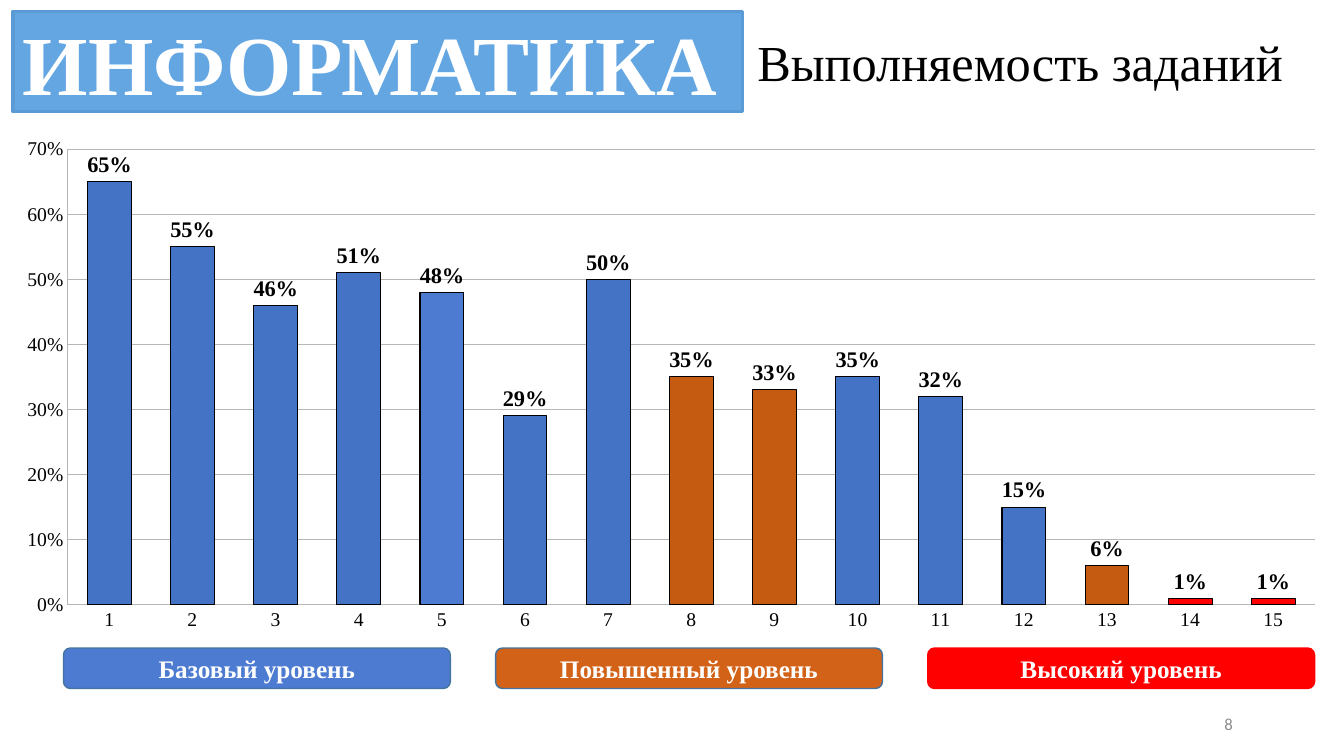
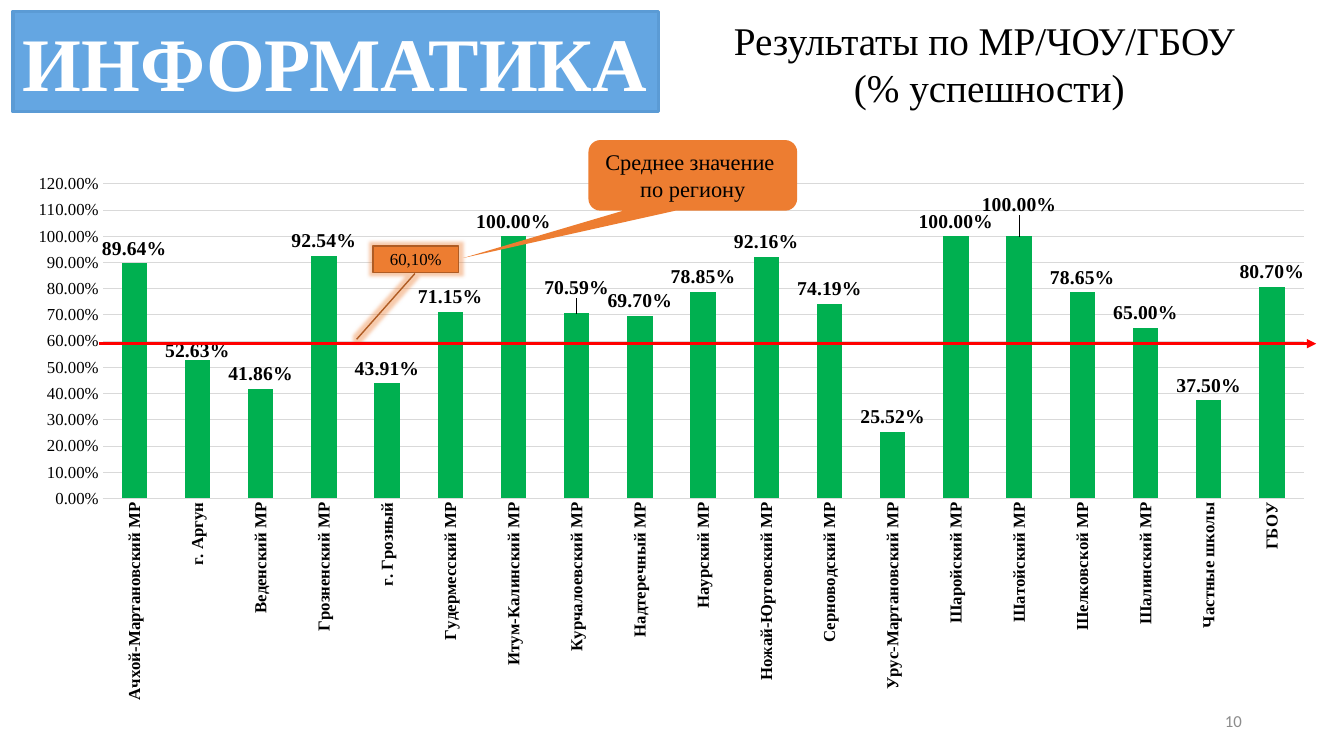
import dataclasses

import lxml.etree
import pptx
import pptx.chart.data
import pptx.dml.color
import pptx.enum.chart
import pptx.enum.shapes
import pptx.enum.text
import pptx.oxml
import pptx.oxml.ns
import pptx.util

Cm = pptx.util.Cm
Pt = pptx.util.Pt
ALIGN = pptx.enum.text.PP_ALIGN
ANCHOR = pptx.enum.text.MSO_ANCHOR
SHAPE = pptx.enum.shapes.MSO_SHAPE
qn = pptx.oxml.ns.qn


@dataclasses.dataclass(frozen=True)
class Theme:
    font: str = "Times New Roman"
    number_font: str = "Calibri"
    black: str = "000000"
    white: str = "FFFFFF"
    gray: str = "8C8C8C"
    banner: str = "64A6E2"
    banner_line: str = "5B9BD5"
    bar: str = "4472C4"
    basic: str = "4C7BD1"
    advanced: str = "D26217"
    advanced_bar: str = "C55A11"
    high: str = "FF0000"
    level_line: str = "43739E"
    success: str = "00B050"
    callout: str = "ED7D31"
    callout_line: str = "AF5C24"
    dark_grid: str = "B7B7B7"
    light_grid: str = "D9D9D9"
    level_size: int = 18
    callout_size: int = 16
    small_size: int = 12


@dataclasses.dataclass(frozen=True)
class ChartStyle:
    number_format: str
    color: str
    gap: int
    maximum: float
    grid: str
    axis_size: int
    label_size: int
    plot: tuple
    bar_line: str = None
    value_line: str = None
    point_colors: dict = dataclasses.field(default_factory=dict)
    label_shifts: dict = dataclasses.field(default_factory=dict)
    vertical_names: bool = False


def rgb(color):
    return pptx.dml.color.RGBColor.from_string(color)


def manual_layout(**values):
    layout = lxml.etree.Element(qn("c:layout"))
    manual = lxml.etree.SubElement(layout, qn("c:manualLayout"))
    for name, value in values.items():
        lxml.etree.SubElement(manual, qn("c:" + name)).set("val", str(value))
    return layout


class Deck:
    def __init__(self, theme):
        self.theme = theme
        self.presentation = pptx.Presentation()
        self.presentation.slide_width = Cm(33.87)
        self.presentation.slide_height = Cm(19.05)
        self.slide = None

    def start_slide(self):
        self.slide = self.presentation.slides.add_slide(self.presentation.slide_layouts[5])

    def style_font(self, font, size, color=None, bold=False, name=None):
        font.size = Pt(size)
        font.name = name or self.theme.font
        font.bold = bold
        font.color.rgb = rgb(color or self.theme.black)

    def style_line(self, line, color, width):
        if color is None:
            line.fill.background()
        else:
            line.color.rgb = rgb(color)
            line.width = Pt(width)

    def set_text(self, shape, lines, size, color=None, bold=False, align=ALIGN.CENTER,
                 anchor=ANCHOR.MIDDLE, name=None):
        frame = shape.text_frame
        frame.text = "\n".join(lines)
        frame.word_wrap = True
        frame.auto_size = pptx.enum.text.MSO_AUTO_SIZE.NONE
        frame.vertical_anchor = anchor
        for paragraph in frame.paragraphs:
            paragraph.alignment = align
            self.style_font(paragraph.font, size, color, bold, name)

    def title(self, lines, box, size):
        shape = self.slide.shapes.title
        shape.left, shape.top, shape.width, shape.height = map(Cm, box)
        self.set_text(shape, lines, size, anchor=ANCHOR.TOP)

    def page_number(self, number, left, top):
        box = self.slide.shapes.add_textbox(Cm(left), Cm(top), Cm(7.62), Cm(1.02))
        self.set_text(box, [number], self.theme.small_size, self.theme.gray,
                      align=ALIGN.RIGHT, name=self.theme.number_font)

    def shape(self, preset, box, fill, line=None, width=1, adjustments=()):
        shape = self.slide.shapes.add_shape(preset, *map(Cm, box))
        shape.shadow.inherit = False
        shape.fill.solid()
        shape.fill.fore_color.rgb = rgb(fill)
        self.style_line(shape.line, line, width)
        for index, value in enumerate(adjustments):
            shape.adjustments[index] = value
        return shape

    def banner(self, width, size):
        theme = self.theme
        shape = self.shape(SHAPE.RECTANGLE, (0.33, 0.28, width, 2.54),
                           theme.banner, theme.banner_line, 2.25)
        self.set_text(shape, ["ИНФОРМАТИКА"], size, theme.white, True, ALIGN.LEFT)

    def levels(self, items):
        for index, (text, fill, line) in enumerate(items):
            box = (1.6 + 10.89 * index, 16.33, 9.75, 1.02)
            shape = self.shape(SHAPE.ROUNDED_RECTANGLE, box, fill, line)
            self.set_text(shape, [text], self.theme.level_size, self.theme.white, True)

    def glow(self, shape, color):
        effects = shape._element.spPr.find(qn("a:effectLst"))
        glow = lxml.etree.SubElement(effects, qn("a:glow"), rad="63500")
        tint = lxml.etree.SubElement(glow, qn("a:srgbClr"), val=color)
        lxml.etree.SubElement(tint, qn("a:alpha"), val="40000")

    def arrow(self, left, right, top, color):
        connector = self.slide.shapes.add_connector(
            pptx.enum.shapes.MSO_CONNECTOR.STRAIGHT, Cm(left), Cm(top), Cm(right), Cm(top))
        self.style_line(connector.line, color, 2.25)
        properties = connector._element.spPr
        lxml.etree.SubElement(properties.find(qn("a:ln")), qn("a:tailEnd"), type="triangle")
        lxml.etree.SubElement(properties, qn("a:effectLst"))

    def column_chart(self, box, categories, values, style):
        data = pptx.chart.data.CategoryChartData(number_format=style.number_format)
        data.categories = categories
        data.add_series("Выполнение", values)
        chart = self.slide.shapes.add_chart(
            pptx.enum.chart.XL_CHART_TYPE.COLUMN_CLUSTERED, *map(Cm, box), data).chart
        chart.has_legend = False
        chart.has_title = False
        self.style_font(chart.font, 10)
        self.style_axes(chart, style)
        plot = chart.plots[0]
        plot.gap_width = style.gap
        plot.vary_by_categories = False
        self.style_series(plot.series[0], style)
        area = chart._chartSpace.chart.plotArea
        for layout in area.findall(qn("c:layout")):
            area.remove(layout)
        left, top, width, height = style.plot
        area.insert(0, manual_layout(layoutTarget="inner", xMode="edge", yMode="edge",
                                     x=left, y=top, w=width, h=height))

    def style_axes(self, chart, style):
        names, scale = chart.category_axis, chart.value_axis
        for axis in (names, scale):
            axis.major_tick_mark = pptx.enum.chart.XL_TICK_MARK.NONE
            axis.has_title = False
            self.style_font(axis.tick_labels.font, style.axis_size,
                            bold=style.vertical_names and axis is names)
        self.style_line(names.format.line, style.grid, 0.75)
        self.style_line(scale.format.line, style.value_line, 0.75)
        scale.minimum_scale = 0
        scale.maximum_scale = style.maximum
        scale.major_unit = 0.1
        scale.tick_labels.number_format = style.number_format
        scale.tick_labels.number_format_is_linked = False
        self.style_line(scale.major_gridlines.format.line, style.grid, 0.75)
        if style.vertical_names:
            names._element.txPr.find(qn("a:bodyPr")).set("rot", "-5400000")

    def style_bar(self, bar, color, line):
        bar.format.fill.solid()
        bar.format.fill.fore_color.rgb = rgb(color)
        self.style_line(bar.format.line, line, 0.75)

    def style_series(self, series, style):
        self.style_bar(series, style.color, style.bar_line)
        for index, color in style.point_colors.items():
            self.style_bar(series.points[index], color, style.bar_line)
        outside = pptx.enum.chart.XL_LABEL_POSITION.OUTSIDE_END
        labels = series.data_labels
        labels.show_value = True
        labels.number_format = style.number_format
        labels.number_format_is_linked = False
        labels.position = outside
        self.style_font(labels.font, style.label_size, bold=True)
        for index, shift in style.label_shifts.items():
            label = series.points[index].data_label
            self.style_font(label.font, style.label_size, bold=True)
            label.position = outside
            element = labels._element.xpath(f'c:dLbl[c:idx/@val="{index}"]')[0]
            element.insert(1, manual_layout(x=0, y=shift))


def tasks_slide(deck):
    theme = deck.theme
    deck.start_slide()
    deck.banner(18.39, 60)
    deck.title(["Выполняемость заданий"], (18.31, 0.66, 14.81, 1.8), 36)
    deck.page_number("8", 23.7, 17.73)
    values = [0.65, 0.55, 0.46, 0.51, 0.48, 0.29, 0.5, 0.35, 0.33, 0.35, 0.32,
              0.15, 0.06, 0.01, 0.01]
    colors = {4: theme.basic, **dict.fromkeys((7, 8, 12), theme.advanced_bar),
              **dict.fromkeys((13, 14), theme.high)}
    style = ChartStyle("0%", theme.bar, 90, 0.7, theme.dark_grid, 14, 16,
                       (0.042, 0.019, 0.958, 0.918), bar_line=theme.black,
                       value_line=theme.dark_grid, point_colors=colors)
    names = [str(number) for number in range(1, len(values) + 1)]
    deck.column_chart((0.33, 3.48, 32.82, 12.55), names, values, style)
    deck.levels([("Базовый уровень", theme.basic, theme.level_line),
                 ("Повышенный уровень", theme.advanced, theme.level_line),
                 ("Высокий уровень", theme.high, theme.high)])


def districts_slide(deck):
    theme = deck.theme
    deck.start_slide()
    results = {
        "Ачхой-Мартановский МР": 0.8964, "г. Аргун": 0.5263, "Веденский МР": 0.4186,
        "Грозненский МР": 0.9254, "г. Грозный": 0.4391, "Гудермесский МР": 0.7115,
        "Итум-Калинский МР": 1, "Курчалоевский МР": 0.7059, "Надтеречный МР": 0.697,
        "Наурский МР": 0.7885, "Ножай-Юртовский МР": 0.9216, "Серноводский МР": 0.7419,
        "Урус-Мартановский МР": 0.2552, "Шаройский МР": 1, "Шатойский МР": 1,
        "Шелковской МР": 0.7865, "Шалинский МР": 0.65, "Частные школы": 0.375,
        "ГБОУ": 0.807,
    }
    style = ChartStyle("0.00%", theme.success, 150, 1.2, theme.light_grid, 12, 14,
                       (0.068, 0.038, 0.911, 0.575), vertical_names=True,
                       label_shifts={1: 0.01, 7: -0.02, 14: -0.03})
    deck.column_chart((0.33, 4.11, 33.22, 13.79), list(results), list(results.values()), style)
    deck.banner(16.26, 54)
    deck.title(["Результаты по МР/ЧОУ/ГБОУ ", "(% успешности)"], (16.33, 0.28, 17.2, 2.64), 28)
    average = deck.shape(SHAPE.LINE_CALLOUT_1, (9.4, 6.2, 2.16, 0.66), theme.callout,
                         theme.callout_line, adjustments=(1.05, 0.49, 3.56, -0.19))
    deck.glow(average, theme.callout)
    deck.set_text(average, ["60,10%"], theme.small_size)
    caption = deck.shape(SHAPE.ROUNDED_RECTANGULAR_CALLOUT, (14.83, 3.53, 5.26, 1.78),
                         theme.callout, adjustments=(-1.1, 1.17, 0.17))
    deck.set_text(caption, ["Среднее значение ", "по региону"], theme.callout_size)
    deck.page_number("10", 23.93, 17.65)
    deck.arrow(2.49, 33.17, 8.66, theme.high)


def main():
    deck = Deck(Theme())
    tasks_slide(deck)
    districts_slide(deck)
    deck.presentation.save("out.pptx")


if __name__ == "__main__":
    main()
